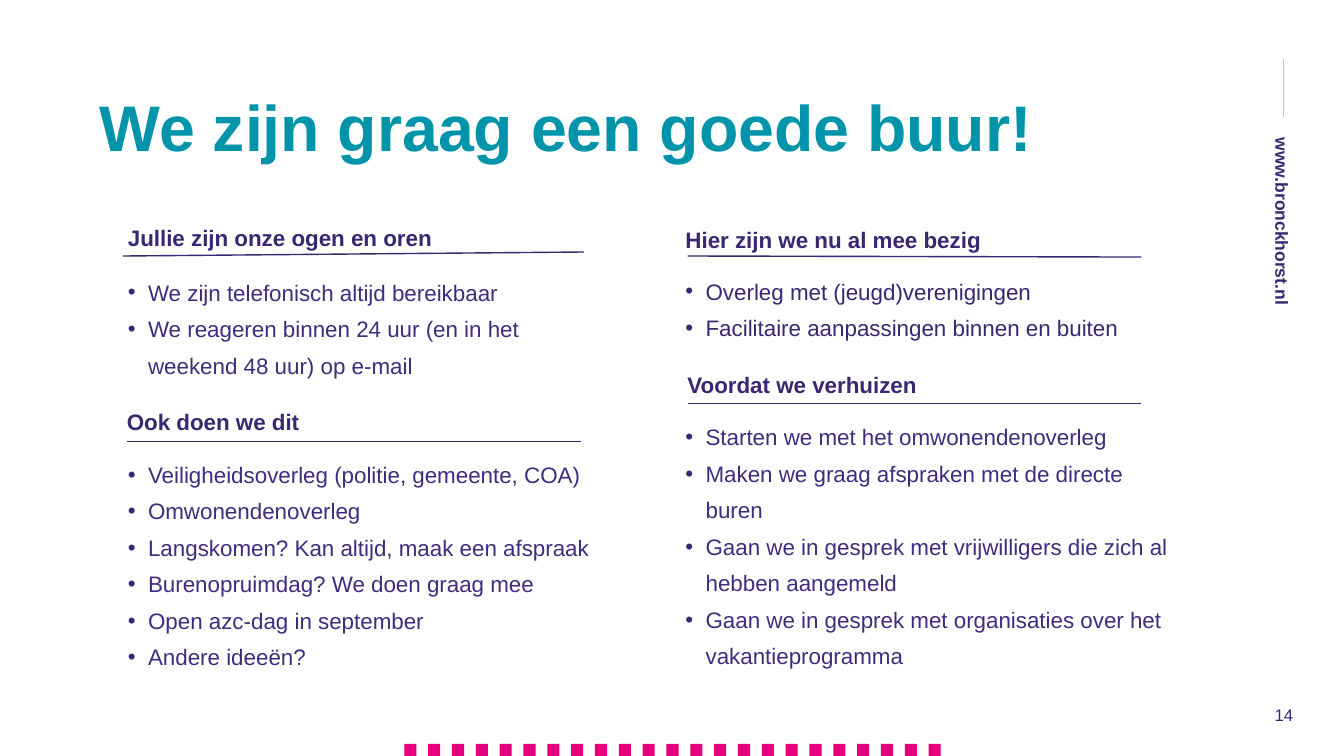
import pptx
import pptx.dml.color
import pptx.enum.shapes
import pptx.enum.text
import pptx.oxml
import pptx.oxml.ns
import pptx.util
from pptx.util import Inches

FONT = "Arial"
COLORS = {
    "teal": "0094AB",
    "navy": "392772",
    "purple": "402C7F",
    "pink": "E6007E",
    "sand": "D0C0A7",
}
TITLE = "We zijn graag een goede buur!"
WEBSITE = "www.bronckhorst.nl"
PAGE_NUMBER = "14"

# Each list: box (left, top, width, height) and groups of (colour, items)
LISTS = [
    ((1.17, 2.62, 4.99, 4.15), [
        ("purple", [
            "We zijn telefonisch altijd bereikbaar",
            "We reageren binnen 24 uur (en in het weekend 48 uur) op e-mail",
        ]),
        ("purple", [
            "Veiligheidsoverleg (politie, gemeente, COA)",
            "Omwonendenoverleg",
            "Langskomen? Kan altijd, maak een afspraak",
            "Burenopruimdag? We doen graag mee",
            "Open azc-dag in september",
            "Andere ideeën?",
        ]),
    ]),
    ((6.7, 2.61, 4.99, 3.79), [
        ("navy", [
            "Overleg met (jeugd)verenigingen",
            "Facilitaire aanpassingen binnen en buiten",
        ]),
        ("purple", [
            "Starten we met het omwonendenoverleg",
            "Maken we graag afspraken met de directe buren",
            "Gaan we in gesprek met vrijwilligers die zich al hebben aangemeld",
            "Gaan we in gesprek met organisaties over het vakantieprogramma",
        ]),
    ]),
]
# Heading text, its box, and the start and end of the rule below it
HEADINGS = [
    ("Jullie zijn onze ogen en oren", (1.17, 2.17, 3.26, 0.37), (1.22, 2.54), (5.79, 2.5)),
    ("Ook doen we dit", (1.16, 4, 1.94, 0.37), (1.26, 4.38), (5.76, 4.38)),
    ("Hier zijn we nu al mee bezig", (6.7, 2.19, 3.18, 0.37), (6.82, 2.54), (11.32, 2.55)),
    ("Voordat we verhuizen", (6.72, 3.63, 2.5, 0.37), (6.82, 4), (11.32, 4)),
]
SQUARE_COUNT = 23
SQUARE_SIZE = 0.12
FIRST_SQUARE, LAST_SQUARE, SQUARE_TOP = 4.01, 9.21, 7.38
LINE_SPACING = 1.36
GROUP_GAP = 52  # points, two text lines


def rgb(name):
    return pptx.dml.color.RGBColor.from_string(COLORS[name])


def add_box(slide, box, wrap=True, inset=True):
    shape = slide.shapes.add_textbox(*map(Inches, box))
    frame = shape.text_frame
    frame.word_wrap = wrap
    if not inset:
        frame.margin_left = frame.margin_right = 0
        frame.margin_top = frame.margin_bottom = 0
    return shape


def add_run(paragraph, text, size, color, bold=False):
    run = paragraph.add_run()
    run.text = text
    run.font.name = FONT
    run.font.size = pptx.util.Pt(size)
    run.font.bold = bold
    run.font.color.rgb = rgb(color)


def add_line(slide, start, end, color, width):
    line = slide.shapes.add_connector(
        pptx.enum.shapes.MSO_CONNECTOR.STRAIGHT, *map(Inches, start + end))
    line.line.color.rgb = rgb(color)
    line.line.width = pptx.util.Pt(width)
    line._element.spPr.append(pptx.oxml.parse_xml(
        f"<a:effectLst {pptx.oxml.ns.nsdecls('a')}/>"))


def add_bullet(paragraph):
    properties = paragraph._p.get_or_add_pPr()
    properties.set("marL", str(Inches(0.2)))
    properties.set("indent", str(-Inches(0.2)))
    namespace = pptx.oxml.ns.nsdecls("a")
    for xml in (
        f'<a:buClr {namespace}><a:srgbClr val="{COLORS["navy"]}"/></a:buClr>',
        f'<a:buFont {namespace} typeface="{FONT}"/>',
        f'<a:buChar {namespace} char="•"/>',
    ):
        properties.append(pptx.oxml.parse_xml(xml))


def add_list(slide, box, groups):
    frame = add_box(slide, box).text_frame
    for group_index, (color, items) in enumerate(groups):
        for item_index, item in enumerate(items):
            first = group_index == item_index == 0
            paragraph = frame.paragraphs[0] if first else frame.add_paragraph()
            add_bullet(paragraph)
            paragraph.line_spacing = LINE_SPACING
            if group_index and not item_index:
                paragraph.space_before = pptx.util.Pt(GROUP_GAP)
            add_run(paragraph, item, 16, color)


def add_squares(slide):
    step = (LAST_SQUARE - FIRST_SQUARE) / (SQUARE_COUNT - 1)
    for index in range(SQUARE_COUNT):
        square = slide.shapes.add_shape(
            pptx.enum.shapes.MSO_SHAPE.RECTANGLE,
            Inches(FIRST_SQUARE + index * step), Inches(SQUARE_TOP),
            Inches(SQUARE_SIZE), Inches(SQUARE_SIZE))
        square.shadow.inherit = False
        square.fill.solid()
        square.fill.fore_color.rgb = rgb("pink")
        square.line.fill.background()


def main():
    presentation = pptx.Presentation()
    presentation.slide_width = Inches(13.33)
    presentation.slide_height = Inches(7.5)
    slide = presentation.slides.add_slide(presentation.slide_layouts[6])

    add_squares(slide)
    add_line(slide, (12.73, 0.59), (12.73, 1.16), "sand", 1.25)

    website = add_box(slide, (11.17, 2.83, 3.18, 0.25), inset=False)
    website.rotation = 90
    paragraph = website.text_frame.paragraphs[0]
    paragraph.line_spacing = 1.3
    add_run(paragraph, WEBSITE, 12.5, "navy", bold=True)

    number = add_box(slide, (12.53, 6.89, 0.41, 0.4), inset=False).text_frame
    number.vertical_anchor = pptx.enum.text.MSO_ANCHOR.MIDDLE
    number.paragraphs[0].alignment = pptx.enum.text.PP_ALIGN.CENTER
    add_run(number.paragraphs[0], PAGE_NUMBER, 12, "navy")

    title = add_box(slide, (0.99, 0.97, 11.3, 1.18), inset=False)
    paragraph = title.text_frame.paragraphs[0]
    paragraph.line_spacing = 0.87
    add_run(paragraph, TITLE, 46, "teal", bold=True)

    for box, groups in LISTS:
        add_list(slide, box, groups)
    for text, box, start, end in HEADINGS:
        frame = add_box(slide, box, wrap=False).text_frame
        frame.auto_size = pptx.enum.text.MSO_AUTO_SIZE.SHAPE_TO_FIT_TEXT
        add_run(frame.paragraphs[0], text, 16, "navy", bold=True)
        add_line(slide, start, end, "navy", 1)

    presentation.save("out.pptx")


if __name__ == "__main__":
    main()
